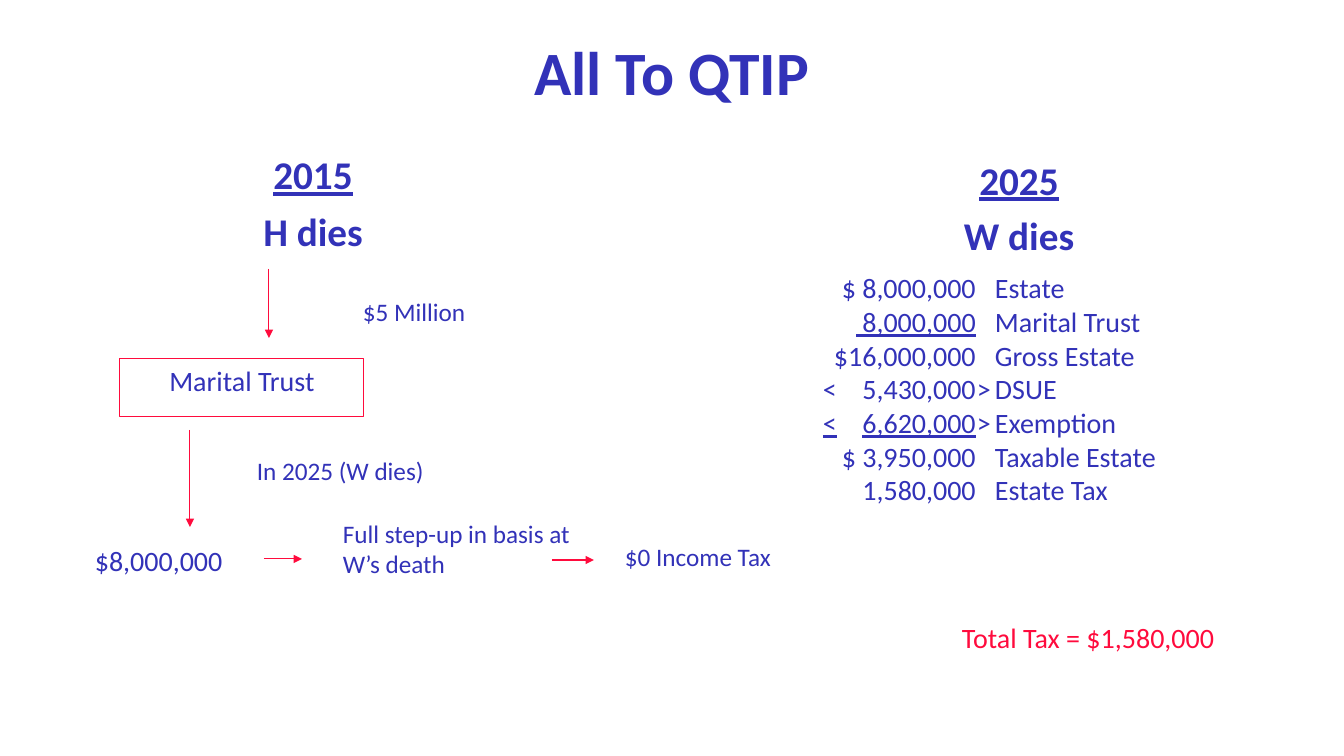
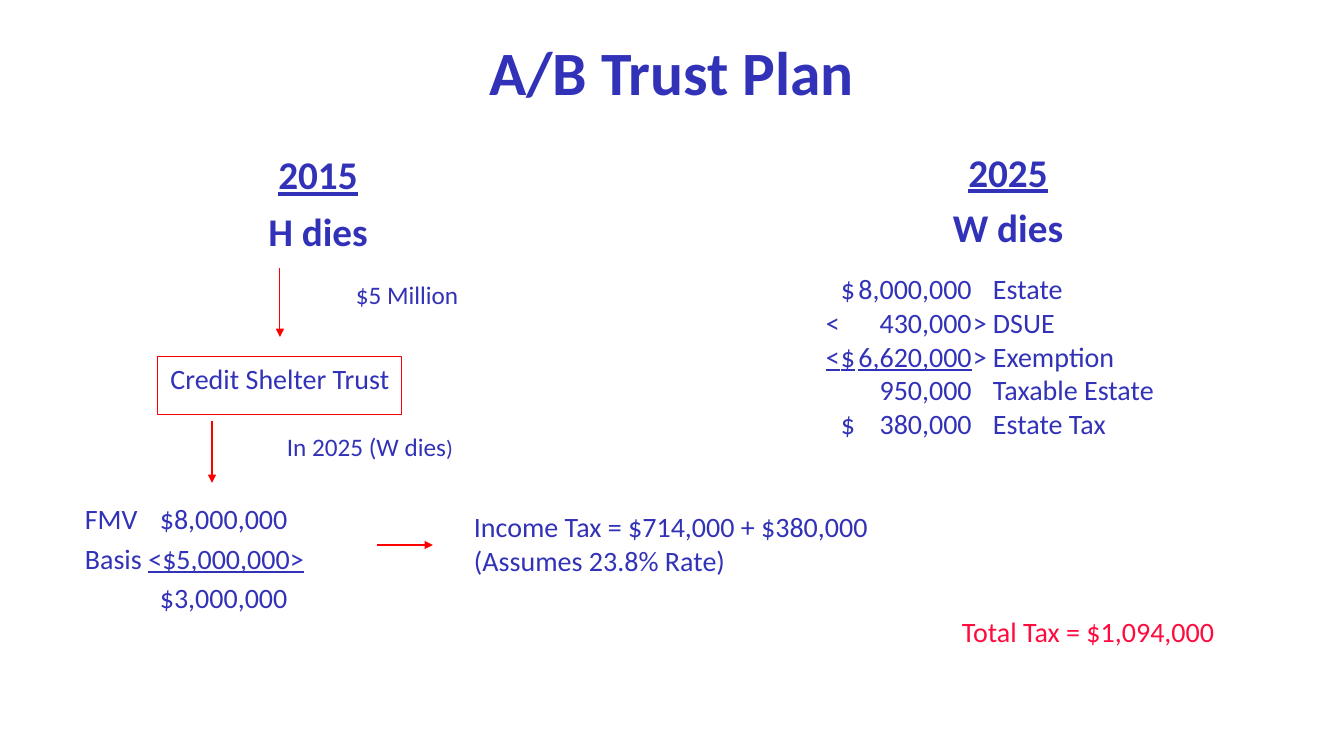
from pptx import Presentation
from pptx.dml.color import RGBColor
from pptx.enum.shapes import MSO_CONNECTOR as Connector, MSO_SHAPE as Shape
from pptx.enum.text import MSO_ANCHOR as Anchor, PP_ALIGN as Align
from pptx.oxml.ns import qn
from pptx.util import Pt
from lxml.etree import SubElement

PX = 914400 / 100.8
INK = RGBColor(0x32, 0x32, 0xB8)
CRIMSON = RGBColor(0xFF, 0x0B, 0x3D)
RED = RGBColor(0xFF, 0x00, 0x00)
FONT = "Calibri"


def emu(*lengths):
    return [round(length * PX) for length in lengths]


def write(slide, area, lines, size=20, color=INK, bold=False, align=Align.LEFT,
          border=None, gap=0, spacing=None, anchor=Anchor.TOP, stops=()):
    if border:
        box = slide.shapes.add_shape(Shape.RECTANGLE, *emu(*area))
        box.shadow.inherit = False
        box.fill.background()
        box.line.color.rgb = border
        box.line.width = Pt(0.75)
    else:
        box = slide.shapes.add_textbox(*emu(*area))
    frame = box.text_frame
    frame.word_wrap = True
    frame.vertical_anchor = anchor
    for index, line in enumerate(lines):
        para = frame.add_paragraph() if index else frame.paragraphs[0]
        para.alignment = align
        if spacing:
            para.line_spacing = spacing
        if index and gap:
            para.space_before = Pt(gap)
        if stops:
            tabs = SubElement(para._p.get_or_add_pPr(), qn("a:tabLst"))
            for position, side in stops:
                SubElement(tabs, qn("a:tab"), pos=str(emu(position)[0]), algn=side)
        for part, text in enumerate(line.split("|")):
            if text:
                span = para.add_run()
                span.text = text
                span.font.name = FONT
                span.font.size = Pt(size)
                span.font.bold = bold
                span.font.underline = part % 2 == 1
                span.font.color.rgb = color
    return frame


deck = Presentation()
deck.slide_width, deck.slide_height = emu(1344, 756)

pages = [
    {
        "title": "All To QTIP",
        "line": CRIMSON,
        "first_death": (190, 151),
        "second_death": (896, 151),
        "trust": ("Marital Trust", 120, 359),
        "arrows": [(269, 269, 269, 338), (190, 430, 190, 527),
                   (264, 559, 302, 559), (552, 560, 594, 560)],
        "notes": [
            ((353, 291, 206, 58), "$5 Million"),
            ((247, 450, 234, 58), "In 2025 (W dies)"),
            ((333, 513, 260, 76), "Full step-up in basis at W’s death"),
            ((615, 536, 258, 40), "$0 Income Tax"),
        ],
        "results": [((85, 539, 212, 40), ["$8,000,000"], 0, ())],
        "ledger_area": (806, 266, 503, 261),
        "ledger_stops": [(7, "l"), (160, "r"), (161, "l"), (179, "l")],
        "ledger": [
            "\t\t$ 8,000,000\t\tEstate",
            "\t\t| 8,000,000|\t\tMarital Trust",
            "\t\t$16,000,000\t\tGross Estate",
            "\t<\t5,430,000\t>\tDSUE",
            "\t|<\t6,620,000|\t>\tExemption",
            "\t\t$ 3,950,000\t\tTaxable Estate",
            "\t\t1,580,000\t\tEstate Tax",
        ],
        "total": ("Total Tax = $1,580,000", 616),
    },
    {
        "title": "A/B Trust Plan",
        "line": RED,
        "first_death": (195, 151),
        "second_death": (885, 143),
        "trust": ("Credit Shelter Trust", 158, 357),
        "arrows": [(280, 268, 280, 337), (212, 421, 212, 483),
                   (377, 545, 433, 545)],
        "notes": [
            ((346, 274, 206, 58), "$5 Million"),
            ((277, 426, 261, 58), "In 2025 (W dies||)"),
        ],
        "results": [
            ((75, 497, 302, 129),
             ["FMV\t$8,000,000", "Basis |<$5,000,000>|", "\t$3,000,000"],
             4, [(75, "l")]),
            ((464, 505, 463, 81),
             ["Income Tax = $714,000 + $380,000", "(Assumes 23.8% Rate)"], 0, ()),
        ],
        "ledger_area": (809, 267, 493, 184),
        "ledger_stops": [(7, "l"), (22, "l"), (153, "r"), (154, "l"), (174, "l")],
        "ledger": [
            "\t\t$\t8,000,000\t\tEstate",
            "\t<\t\t430,000\t>\tDSUE",
            "\t|<\t$\t6,620,000|\t>\tExemption",
            "\t\t\t950,000\t\tTaxable Estate",
            "\t\t$\t380,000\t\tEstate Tax",
        ],
        "total": ("Total Tax = $1,094,000", 610),
    },
]

for page in pages:
    slide = deck.slides.add_slide(deck.slide_layouts[6])
    write(slide, (0, 25, 1344, 101), [page["title"]], 44, bold=True,
          align=Align.CENTER, spacing=0.9, anchor=Anchor.MIDDLE)
    write(slide, (*page["first_death"], 246, 118), ["|2015|", "H dies"], 28,
          bold=True, align=Align.CENTER, spacing=0.9, gap=10)
    write(slide, (*page["second_death"], 246, 118), ["|2025|", "W dies"], 28,
          bold=True, align=Align.CENTER, gap=5.6)

    trust, left, top = page["trust"]
    write(slide, (left, top, 244, 58), [trust], align=Align.CENTER, border=page["line"])

    for ends in page["arrows"]:
        arrow = slide.shapes.add_connector(Connector.STRAIGHT, *emu(*ends))
        arrow.line.color.rgb = page["line"]
        arrow.line.width = Pt(0.75)
        SubElement(arrow.line._get_or_add_ln(), qn("a:tailEnd"), type="triangle")
        SubElement(arrow._element.spPr, qn("a:effectLst"))

    for area, text in page["notes"]:
        spans = write(slide, area, [text], 18).paragraphs[0].runs
        for span in spans[1:]:
            span.font.size = Pt(16)
    for area, lines, gap, stops in page["results"]:
        write(slide, area, lines, gap=gap, stops=stops)
    write(slide, page["ledger_area"], page["ledger"], stops=page["ledger_stops"])

    total, top = page["total"]
    write(slide, (952, top, 392, 68), [total], color=CRIMSON)

deck.save("out.pptx")
